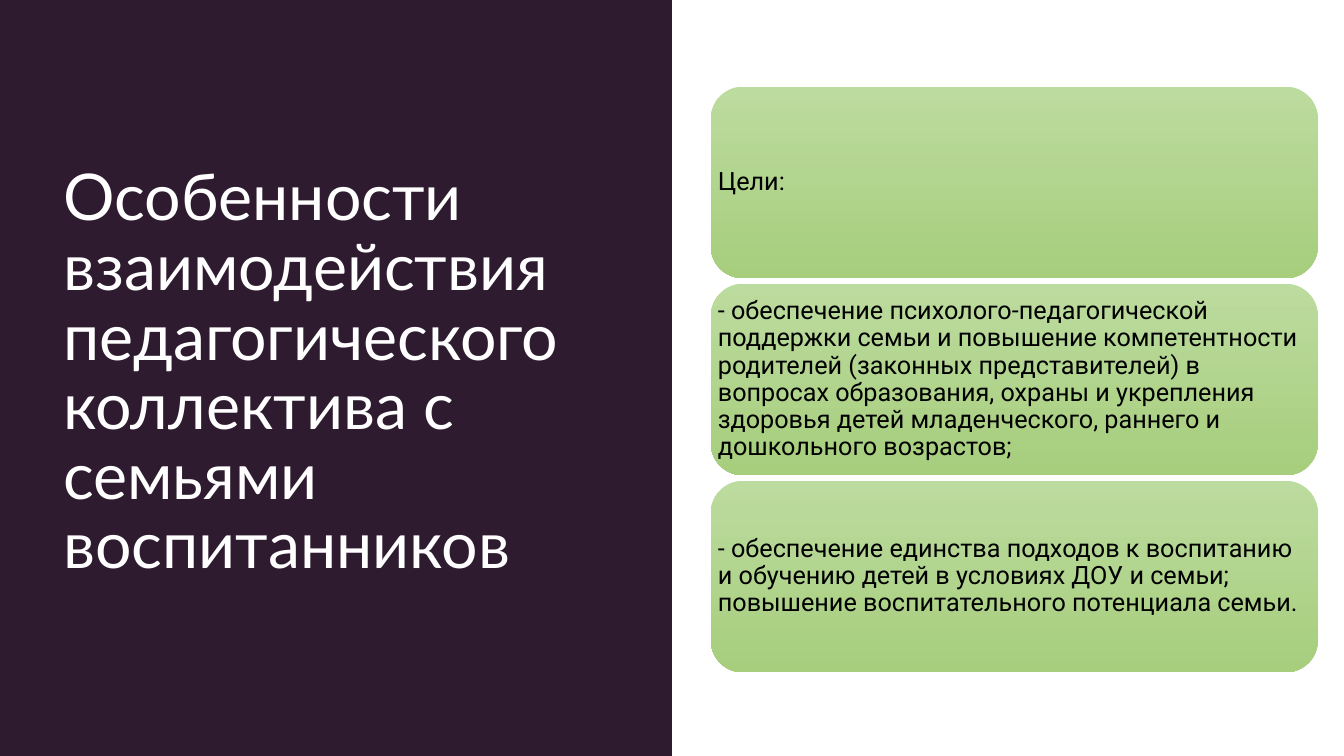
from pptx import Presentation
from pptx import util as u
from pptx.dml.color import RGBColor
from pptx.enum import shapes, text

TITLE = "Особенности взаимодействия педагогического коллектива с семьями воспитанников"
GOALS = [
    "Цели:",
    "- обеспечение психолого-педагогической поддержки семьи и повышение компетентности "
    "родителей (законных представителей) в вопросах образования, охраны и укрепления "
    "здоровья детей младенческого, раннего и дошкольного возрастов;",
    "- обеспечение единства подходов к воспитанию и обучению детей в условиях ДОУ и семьи; "
    "повышение воспитательного потенциала семьи.",
]

PLUM = RGBColor(0x2F, 0x1B, 0x30)
WHITE = RGBColor(0xFF, 0xFF, 0xFF)
BLACK = RGBColor(0, 0, 0)
GREENS = RGBColor(0xBC, 0xDB, 0x9E), RGBColor(0xA6, 0xCE, 0x7D)

WIDTH, HEIGHT = 13.33, 7.5
CARD_LEFT, CARD_TOP, CARD_WIDTH, CARD_HEIGHT = 7.05, 0.86, 6.02, 1.9
CARD_GAP = 0.055
TITLE_FORMAT = {"name": "Lato", "size": u.Pt(46)}
GOAL_FORMAT = {"name": "Roboto", "size": u.Pt(18)}


def inches(*values):
    return [u.Inches(v) for v in values]


def add_shape(s, kind, box):
    sp = s.shapes.add_shape(kind, *inches(*box))
    sp.shadow.inherit = False
    sp.line.fill.background()
    return sp


def add_text(s, words, box, insets, font, color):
    tf = s.shapes.add_textbox(*inches(*box)).text_frame
    frame = {"word_wrap": True, "vertical_anchor": text.MSO_ANCHOR.MIDDLE}
    frame.update(zip(("margin_left", "margin_top", "margin_right", "margin_bottom"),
                     inches(*insets)))
    for name, value in frame.items():
        setattr(tf, name, value)
    p = tf.paragraphs[0]
    p.line_spacing = 0.9
    r = p.add_run()
    r.text = words
    for name, value in font.items():
        setattr(r.font, name, value)
    r.font.color.rgb = color


def main():
    prs = Presentation()
    prs.slide_width, prs.slide_height = inches(WIDTH, HEIGHT)
    s = prs.slides.add_slide(prs.slide_layouts[6])

    panel = add_shape(s, shapes.MSO_SHAPE.RECTANGLE, (0, 0, WIDTH / 2, HEIGHT))
    panel.fill.solid()
    panel.fill.fore_color.rgb = PLUM
    add_text(s, TITLE, (0.53, 0.53, 5.55, 6.36), (0.1, 0.05, 0.1, 0.05), TITLE_FORMAT, WHITE)

    for row, goal in enumerate(GOALS):
        top = CARD_TOP + row * (CARD_HEIGHT + CARD_GAP)
        box = CARD_LEFT, top, CARD_WIDTH, CARD_HEIGHT
        card = add_shape(s, shapes.MSO_SHAPE.ROUNDED_RECTANGLE, box)
        card.fill.gradient()
        card.fill.gradient_angle = 270
        for stop, color in zip(card.fill.gradient_stops, GREENS):
            stop.color.rgb = color
        add_text(s, goal, box, [0.07] * 4, GOAL_FORMAT, BLACK)

    prs.save("out.pptx")


if __name__ == "__main__":
    main()
